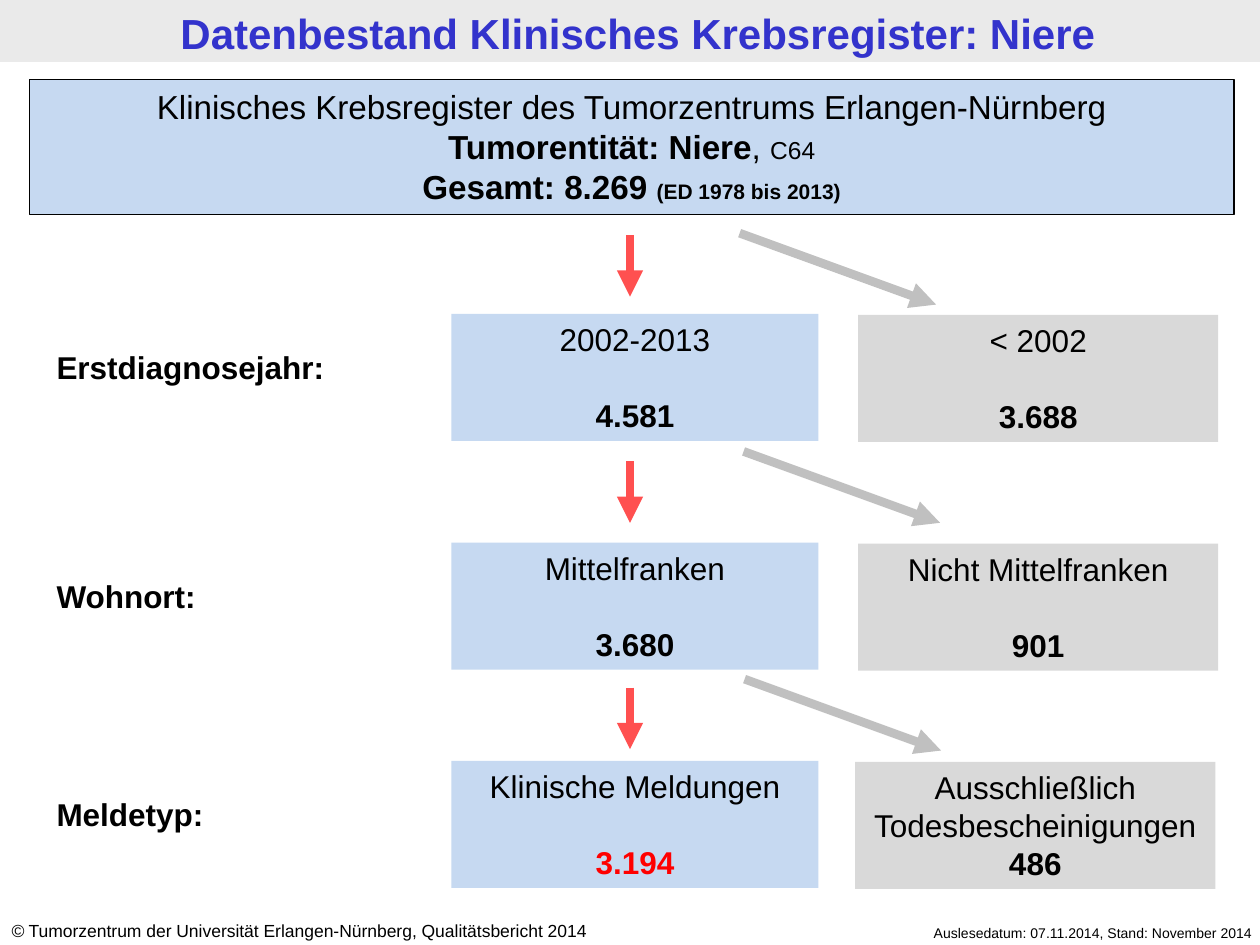
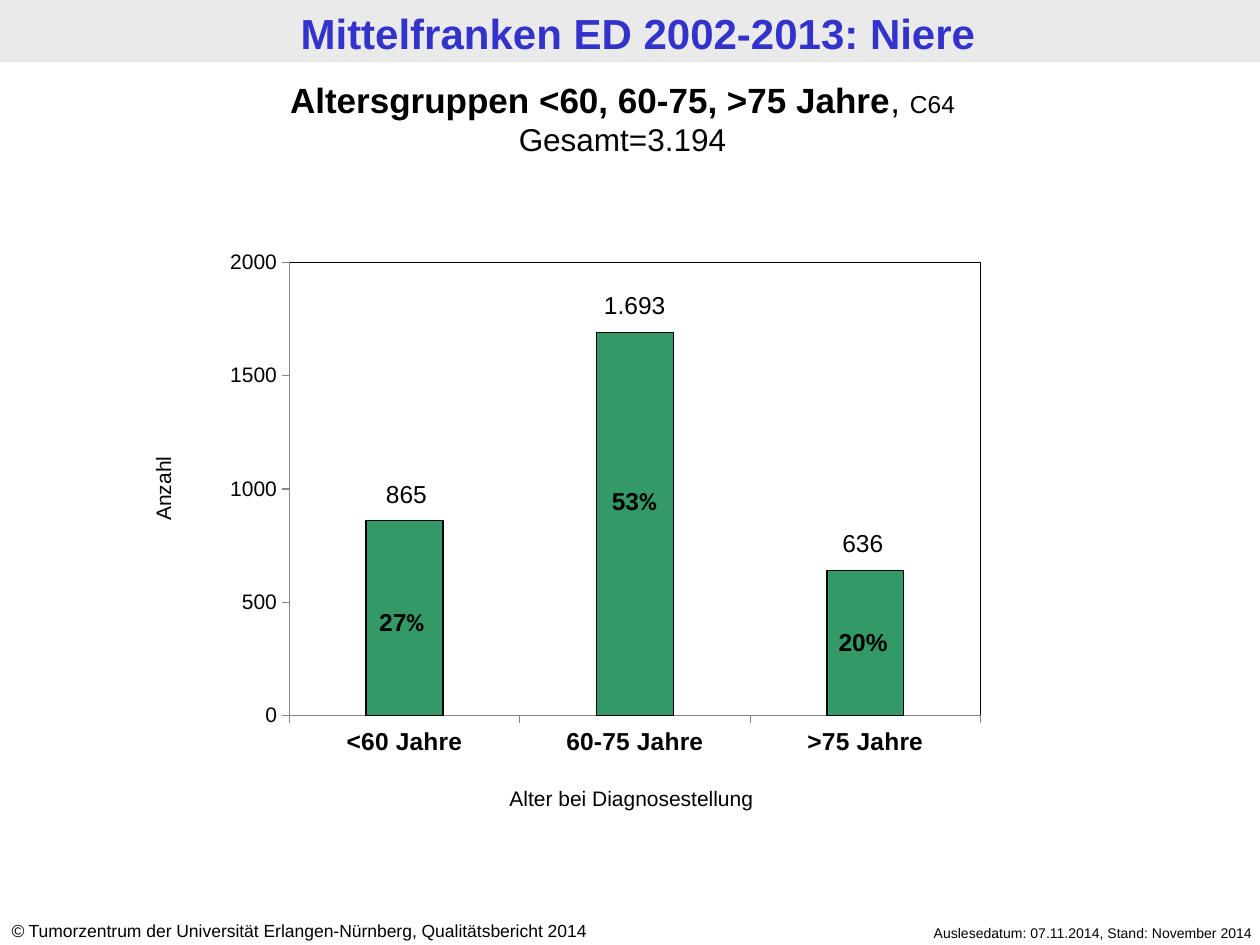
from pptx import Presentation
from pptx import util as u
from pptx.chart.data import CategoryChartData
from pptx.dml.color import RGBColor
from pptx.enum import chart as ch, shapes, text
from pptx.oxml import parse_xml
from pptx.oxml.ns import nsdecls, qn
from lxml import etree

Cm, Pt = u.Cm, u.Pt
COLORS = {"band": "EAEAEA", "title": "3333CC", "text": "000000", "kept": "C6D9F1",
          "dropped": "D9D9D9", "arrow": "FF5050", "side_arrow": "C0C0C0",
          "result": "FF0000", "bar": "339966", "axis": "868686"}
FONT = "Arial"
LEFT, CENTER, RIGHT = text.PP_ALIGN.LEFT, text.PP_ALIGN.CENTER, text.PP_ALIGN.RIGHT


def rgb(name):
    return RGBColor.from_string(COLORS[name])


def style(font, size, bold=False, italic=False, color="text", name=FONT):
    font.size, font.bold, font.italic, font.name = Pt(size), bold, italic, name
    font.color.rgb = rgb(color)


def write(sp, paragraphs, align=LEFT, anchor=text.MSO_ANCHOR.TOP):
    """Each paragraph is a list of runs: (text, size, style options)."""
    tf = sp.text_frame
    tf.word_wrap, tf.vertical_anchor = True, anchor
    for i, runs in enumerate(paragraphs):
        p = tf.paragraphs[0] if i == 0 else tf.add_paragraph()
        p.alignment = align
        for content, size, options in runs:
            r = p.add_run()
            r.text = content
            style(r.font, size, **options)
    return tf


def add_text(s, box, paragraphs, align=LEFT):
    sp = s.shapes.add_textbox(*map(Cm, box))
    write(sp, paragraphs, align)
    return sp


def add_rect(s, box, fill, line=None):
    sp = s.shapes.add_shape(shapes.MSO_SHAPE.RECTANGLE, *map(Cm, box))
    sp.shadow.inherit = False
    sp.fill.solid()
    sp.fill.fore_color.rgb = rgb(fill)
    if line:
        sp.line.color.rgb, sp.line.width = rgb(line), Pt(0.75)
    else:
        sp.line.fill.background()
    return sp


def add_arrow(s, x, y, dx, dy, color):
    c = s.shapes.add_connector(shapes.MSO_CONNECTOR.STRAIGHT,
                               Cm(x), Cm(y), Cm(x + dx), Cm(y + dy))
    c.line.color.rgb, c.line.width = rgb(color), Pt(5)
    etree.SubElement(c.line._get_or_add_ln(), qn("a:tailEnd"), type="triangle")
    etree.SubElement(c._element.spPr, qn("a:effectLst"))


def add_slide(prs, title):
    """Slide with the shared title band and footers."""
    s = prs.slides.add_slide(prs.slide_layouts[5])
    sp = s.shapes.title
    sp.left, sp.top, sp.width, sp.height = map(Cm, (0.16, 0.03, 25.4, 1.24))
    tf = write(sp, [[(title, 24, {"bold": True, "color": "title"})]], CENTER,
               anchor=text.MSO_ANCHOR.BOTTOM)
    tf.auto_size = text.MSO_AUTO_SIZE.NONE
    tf.margin_top = tf.margin_bottom = Cm(0.1)
    band = add_rect(s, (0, 0, 25.4, 1.25), "band")
    sp._element.addprevious(band._element)  # band lies behind the title
    add_text(s, (16.89, 18.52, 8.61, 0.61),
             [[("Auslesedatum: 07.11.2014, Stand: November 2014", 8, {})]], RIGHT)
    add_text(s, (-0.02, 18.43, 13.31, 0.69),
             [[("©", 10, {"italic": True}),
               (" Tumorzentrum der Universität Erlangen-Nürnberg, "
                "Qualitätsbericht 2014", 10, {})]])
    return s


def add_total(s, box):
    sp = add_rect(s, box, "kept", line="text")
    bold = {"bold": True}
    write(sp, [
        [("Klinisches Krebsregister des Tumorzentrums Erlangen-Nürnberg", 19, {})],
        [("Tumorentität: Niere", 19, bold), (", ", 19, {}), ("C64", 14, {})],
        [("Gesamt: 8.269 ", 19, bold), ("(ED 1978 bis 2013)", 12, bold)],
    ], CENTER)


def add_count(s, box, fill, label, count, color="text", gap=21.7):
    sp = add_rect(s, box, fill)
    tf = write(sp, [[(label, 18, {})],
                    [(count, 18, {"bold": True, "color": color})]], CENTER)
    tf.paragraphs[1].space_before = Pt(gap)


def add_step(s, top, label, kept, dropped, dropped_left=17.3):
    """One filter step: its name, the cases kept and the cases dropped."""
    add_text(s, (0.89, top + 0.57, 7.01, 1.02), [[(label, 18, {"bold": True})]])
    add_count(s, (9.1, top, 7.4, 2.56), "kept", **kept)
    add_count(s, (dropped_left, top + 0.02, 7.26, 2.56), "dropped", **dropped)


def registry_slide(prs):
    s = add_slide(prs, "Datenbestand Klinisches Krebsregister: Niere")
    add_total(s, (0.59, 1.61, 24.29, 2.71))

    # Filter steps
    add_step(s, 6.33, "Erstdiagnosejahr:", {"label": "2002-2013", "count": "4.581"},
             {"label": "< 2002", "count": "3.688"})
    add_step(s, 10.94, "Wohnort:", {"label": "Mittelfranken", "count": "3.680"},
             {"label": "Nicht Mittelfranken", "count": "901"})
    add_step(s, 15.34, "Meldetyp:",
             {"label": "Klinische Meldungen", "count": "3.194", "color": "result"},
             {"label": "Ausschließlich Todesbescheinigungen", "count": "486", "gap": 0},
             dropped_left=17.24)

    # Arrows between the steps
    for i, (x, y) in enumerate([(14.91, 4.7), (14.99, 9.1), (15.01, 13.69)]):
        add_arrow(s, 12.7, 4.74 + 4.56 * i, 0, 1.24, "arrow")
        add_arrow(s, x, y, 3.96, 1.44, "side_arrow")


def add_age_chart(s, box):
    data = CategoryChartData(number_format="0")
    data.categories = ["<60 Jahre", "60-75 Jahre", ">75 Jahre"]
    data.add_series("Anzahl", (860, 1690, 640))
    chart = s.shapes.add_chart(ch.XL_CHART_TYPE.COLUMN_STACKED, *map(Cm, box), data).chart
    chart.has_legend = chart.has_title = False
    style(chart.font, 18, name="Calibri")

    plot = chart.plots[0]
    plot.gap_width, plot.overlap, plot.vary_by_categories = 200, 100, False
    fmt = plot.series[0].format
    fmt.fill.solid()
    fmt.fill.fore_color.rgb = rgb("bar")
    fmt.line.color.rgb, fmt.line.width = rgb("text"), Pt(0.75)

    for axis, size, bold in ((chart.category_axis, 14, True), (chart.value_axis, 12, False)):
        axis.has_major_gridlines = False
        axis.major_tick_mark = ch.XL_TICK_MARK.OUTSIDE
        axis.format.line.color.rgb = rgb("axis")
        style(axis.tick_labels.font, size, bold)
    axis.minimum_scale, axis.maximum_scale, axis.major_unit = 0, 2000, 500

    # Fixed plot area with a black frame
    area = chart._chartSpace.chart.plotArea
    for old in area.findall(qn("c:layout")):
        area.remove(old)
    place = "".join(f'<c:{k} val="{v}"/>' for k, v in (
        ("layoutTarget", "inner"), ("xMode", "edge"), ("yMode", "edge"),
        ("x", 0.113), ("y", 0.142), ("w", 0.786), ("h", 0.772)))
    area.insert(0, parse_xml(f'<c:layout {nsdecls("c")}><c:manualLayout>{place}'
                             '</c:manualLayout></c:layout>'))
    area.append(parse_xml(
        f'<c:spPr {nsdecls("c", "a")}><a:noFill/><a:ln w="9525"><a:solidFill>'
        f'<a:srgbClr val="{COLORS["text"]}"/></a:solidFill></a:ln></c:spPr>'))


def age_slide(prs):
    s = add_slide(prs, "Mittelfranken ED 2002-2013: Niere")
    add_age_chart(s, (3.83, 3.61, 17.73, 11.84))
    add_text(s, (0, 1.45, 25.1, 1.88), [
        [("Altersgruppen <60, 60-75, >75 Jahre", 20, {"bold": True}),
         (", ", 20, {}), ("C64", 14, {})],
        [("Gesamt=3.194", 18, {})]], CENTER)

    # Counts above the bars
    for i, (count, top) in enumerate([("865", 9.53), ("1.693", 5.72), ("636", 10.52)]):
        add_text(s, (6.9 + 4.6 * i, top, 2.59, 0.86), [[(count, 14, {})]], CENTER)

    # Shares inside the bars
    bold = {"bold": True}
    for x, y, width, share, sign_font in ((7.3, 12.12, 1.6, "27", "Calibri"),
                                          (11.89, 9.67, 1.8, "53", "Calibri"),
                                          (16.5, 12.52, 1.8, "20", FONT)):
        add_text(s, (x, y, width, 0.86),
                 [[(share, 14, bold), ("%", 14, {"bold": True, "name": sign_font})]], CENTER)

    # Axis titles
    add_text(s, (8.5, 15.72, 8.46, 0.76), [[("Alter bei Diagnosestellung", 12, {})]], CENTER)
    sp = add_text(s, (-0.03, 9.47, 6.63, 0.76), [[("Anzahl", 12, {})]], CENTER)
    sp.rotation = 270


def main():
    prs = Presentation()
    prs.slide_width, prs.slide_height = Cm(25.4), Cm(19.05)
    registry_slide(prs)
    age_slide(prs)
    prs.save("out.pptx")


if __name__ == "__main__":
    main()
